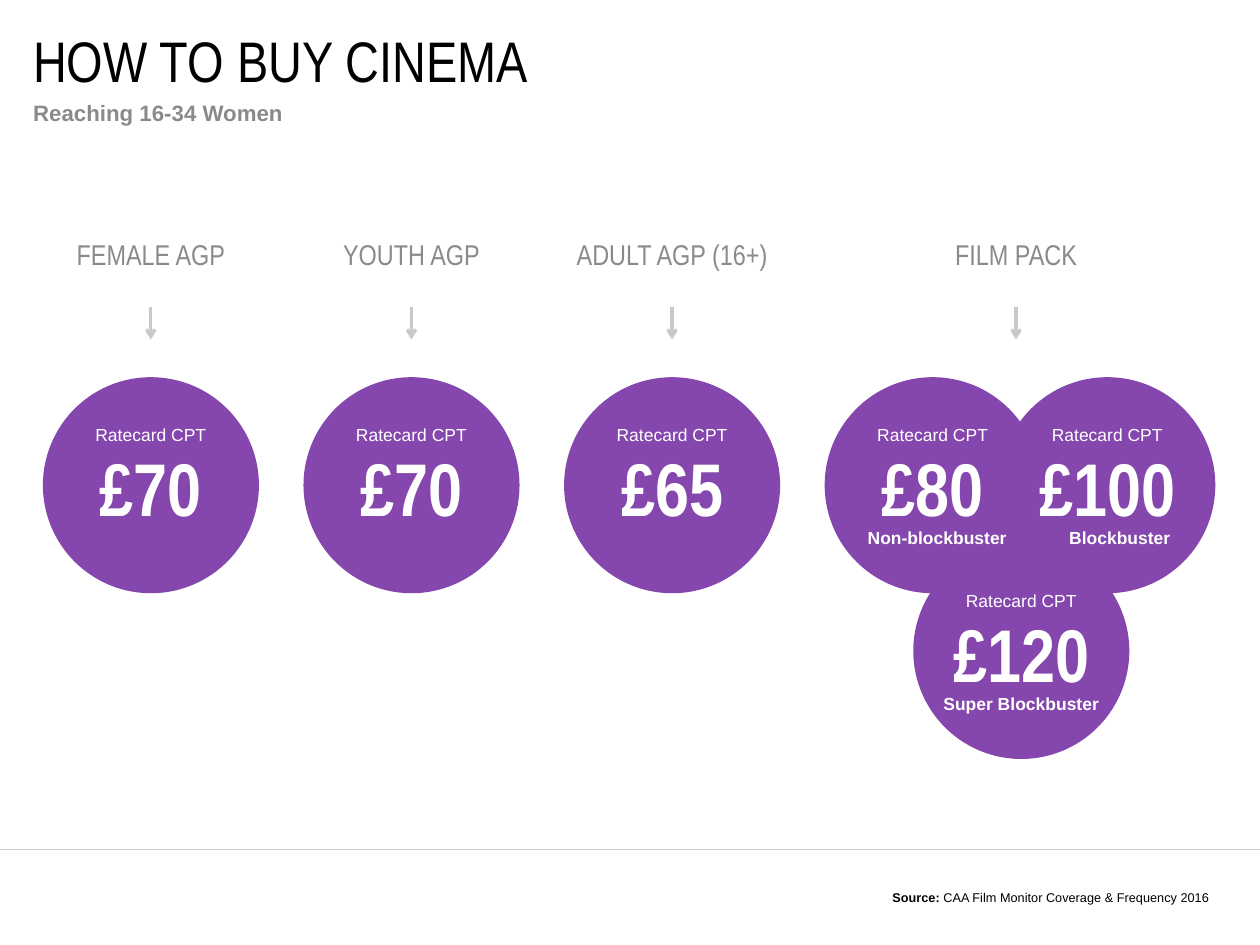
from lxml import etree
from pptx import Presentation
from pptx.dml.color import RGBColor
from pptx.enum.shapes import MSO_CONNECTOR, MSO_SHAPE
from pptx.enum.text import MSO_ANCHOR, PP_ALIGN
from pptx.oxml.ns import qn
from pptx.util import Cm, Inches, Pt

LEFT, MID, RIGHT = PP_ALIGN.LEFT, PP_ALIGN.CENTER, PP_ALIGN.RIGHT
TOP, CENTRE, BOTTOM = MSO_ANCHOR.TOP, MSO_ANCHOR.MIDDLE, MSO_ANCHOR.BOTTOM
OVAL, LINE = MSO_SHAPE.OVAL, MSO_CONNECTOR.STRAIGHT

# Content: columns and rows count in grid steps, from the first disc
TITLE = "HOW TO BUY CINEMA"
SUB = "Reaching 16-34 Women"
LABEL = "Ratecard CPT"
SOURCE = [("Source: ", "note_bold"),
          ("CAA Film Monitor Coverage & Frequency 2016", "note")]
HEADS = [("FEMALE AGP", 0), ("YOUTH AGP", 1), ("ADULT AGP (16+)", 2),
         ("FILM PACK", 3.32)]
# price, column, row, film type, shift of the film type
DISCS = [("£70", 0, 0, "", 0), ("£70", 1, 0, "", 0), ("£65", 2, 0, "", 0),
         ("£80", 3, 0, "Non-blockbuster", 0.04),
         ("£100", 3.67, 0, "Blockbuster", 0.11),
         ("£120", 3.34, 1, "Super Blockbuster", 0)]

COLORS = {"purple": "8547AD", "grey": "8A8A8D", "pale": "CAC8C8",
          "white": "FFFFFF", "black": "000000"}
# font name, size, bold, colour
STYLES = {"title": ("Arial Narrow", 36, False, "black"),
          "sub": ("Arial", 14, True, "grey"),
          "head": ("Arial Narrow", 18, False, "grey"),
          "label": ("Arial", 11, False, "white"),
          "price": ("Arial Narrow", 47, True, "white"),
          "film": ("Arial", 11, True, "white"),
          "note_bold": ("Arial", 8, True, "black"),
          "note": ("Arial", 8, False, "black")}

START, STEP = 1.32, 2.28          # centre of first column, column pitch
ROW, DROP = 3.3, 1.45             # top of first discs, row pitch
DISC, BOX, EDGE = 1.89, 2.38, 0.29
# offset from disc top, height
PARTS = {"label": (0.37, 0.26), "price": (0.53, 0.87), "film": (1.27, 0.26)}

deck = Presentation()
deck.slide_width, deck.slide_height = Cm(28), Cm(21)
slide = deck.slides.add_slide(deck.slide_layouts[5])
shapes = slide.shapes


def rgb(name):
    return RGBColor.from_string(COLORS[name])


def mid(col):
    """Centre of a column, in inches."""
    return START + col * STEP


def write(shape, runs, align=MID, anchor=TOP, pad=(0.1, 0.04)):
    frame = shape.text_frame
    side, end = map(Inches, pad)
    looks = {"word_wrap": True, "vertical_anchor": anchor,
             "margin_left": side, "margin_right": side,
             "margin_top": end, "margin_bottom": end}
    for key, value in looks.items():
        setattr(frame, key, value)
    para = frame.paragraphs[0]
    para.alignment = align
    for text, style in runs:
        run = para.add_run()
        run.text = text
        name, size, bold, color = STYLES[style]
        for key, value in {"name": name, "size": Pt(size), "bold": bold}.items():
            setattr(run.font, key, value)
        run.font.color.rgb = rgb(color)
    return para


def text(x, y, w, h, runs, **looks):
    box = shapes.add_textbox(*map(Inches, (x, y, w, h)))
    return write(box, runs, **looks)


def rule(x1, y1, x2, y2, width, arrow=False):
    line = shapes.add_connector(LINE, *map(Inches, (x1, y1, x2, y2)))
    line.line.color.rgb = rgb("pale")
    line.line.width = Pt(width)
    if arrow:
        tail = etree.SubElement(line.line._get_or_add_ln(), qn("a:tailEnd"))
        tail.set("type", "arrow")
    etree.SubElement(line._element.spPr, qn("a:effectLst"))


def disc(col, row):
    shape = shapes.add_shape(OVAL, *map(Inches, (
        mid(col) - DISC / 2, ROW + row * DROP, DISC, DISC)))
    shape.shadow.inherit = False
    shape.fill.solid()
    shape.fill.fore_color.rgb = rgb("purple")
    shape.line.fill.background()


title = shapes.title
spot = {"left": EDGE, "top": 0.3, "width": 10.18, "height": 0.45}
for key, value in spot.items():
    setattr(title, key, Inches(value))
write(title, [(TITLE, "title")], align=LEFT, anchor=CENTRE, pad=(0, 0))
sub = text(EDGE, 0.82, 10.18, 0.48, [(SUB, "sub")], align=LEFT, pad=(0, 0.05))
sub.line_spacing = Pt(16.8)

rule(0, 7.43, deck.slide_width.inches, 7.43, 0.5)
text(4.84, 7.73, 5.84, 0.24, SOURCE, align=RIGHT, anchor=BOTTOM, pad=(0.1, 0.05))

for head, col in HEADS:
    text(mid(col) - BOX / 2, 1.95, BOX, 0.54, [(head, "head")],
         anchor=CENTRE, pad=(0.1, 0.12))
    rule(mid(col), 2.69, mid(col), 2.97, 2, arrow=True)

for price, col, row, film, shift in DISCS:
    disc(col, row)
for price, col, row, film, shift in DISCS:
    words = {"label": LABEL, "price": price, "film": film}
    for part, (down, high) in PARTS.items():
        if words[part]:
            x = mid(col) - BOX / 2 + (shift if part == "film" else 0)
            text(x, ROW + row * DROP + down, BOX, high, [(words[part], part)])

deck.save("out.pptx")
